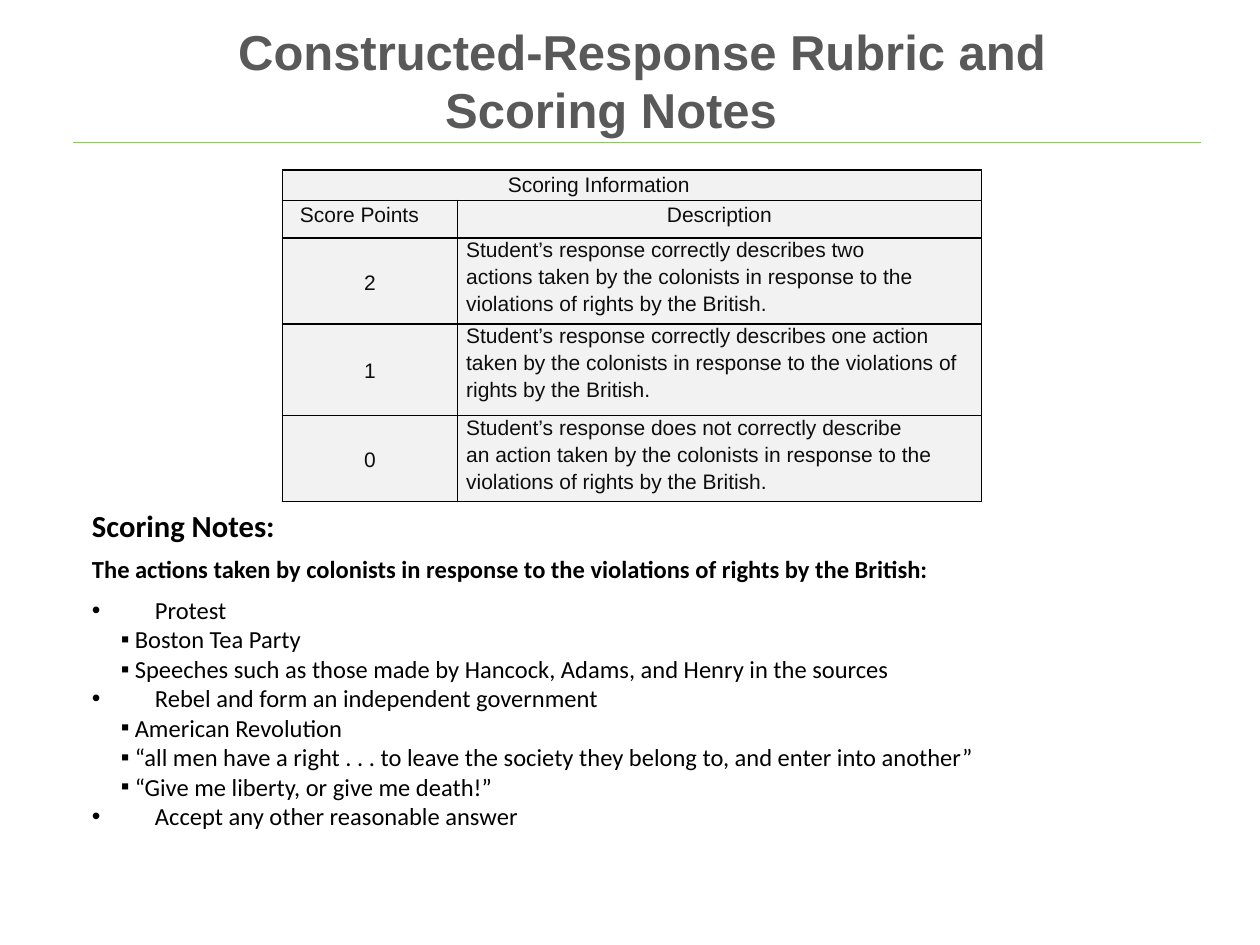
from lxml import etree
from pptx import Presentation
from pptx.dml.color import RGBColor
from pptx.enum.shapes import MSO_CONNECTOR
from pptx.enum.text import MSO_ANCHOR, MSO_AUTO_SIZE, PP_ALIGN
from pptx.oxml.ns import qn
from pptx.util import Inches, Pt

CENTER, LEFT = PP_ALIGN.CENTER, PP_ALIGN.LEFT
TOP, MIDDLE = MSO_ANCHOR.TOP, MSO_ANCHOR.MIDDLE
TITLE_AND_CONTENT = 1

# Content
TITLE = ["Constructed-Response Rubric and", "Scoring Notes"]
CAPTION = "Scoring Information"
HEADER = ["Score Points", "Description"]
SCORES = [
    ("2", "Student’s response correctly describes two",
     "actions taken by the colonists in response to the violations of rights by the British."),
    ("1", "Student’s response correctly describes one action",
     "taken by the colonists in response to the violations of rights by the British."),
    ("0", "Student’s response does not correctly describe",
     "an action taken by the colonists in response to the violations of rights by the British."),
]
NOTES = [  # (kind, text)
    ("heading", "Scoring Notes:"),
    ("lead", "The actions taken by colonists in response to the violations of rights by the British:"),
    ("item", "Protest"),
    ("detail", "Boston Tea Party"),
    ("detail", "Speeches such as those made by Hancock, Adams, and Henry in the sources"),
    ("item", "Rebel and form an independent government"),
    ("detail", "American Revolution"),
    ("detail", "“all men have a right . . . to leave the society they belong to, and enter into another”"),
    ("detail", "“Give me liberty, or give me death!”"),
    ("item", "Accept any other reasonable answer"),
]

# Theme and grid
THEME = {
    "title": ("Arial", 28, "595959", True),
    "table": ("Arial", 12, "0D0D0D", False),
    "heading": ("Calibri", 17.5, "000000", True),
    "lead": ("Calibri", 14, "000000", True),
    "item": ("Calibri", 14, "000000", False),
    "detail": ("Calibri", 14, "000000", False),
    "rule": "90C56A", "cell": "F2F2F2", "border": "000000",
}
LEVELS = {  # kind: (level, left margin, indent, bullet)
    "heading": (0, 0.22, 0, None),
    "lead": (0, 0.22, 0, None),
    "item": (0, 0.72, -0.5, "•"),
    "detail": (1, 0.56, -0.11, "▪"),
}
COLS = [1.39, 4.16]
ROWS = [0.24, 0.3, 0.68, 0.73, 0.68]
TABLE_LEFT = 2.24
CONTENT_TOP = 1.35
NOTES_INSET = sum(ROWS) + 0.04


def style(p, kind):
    name, size, color, bold = THEME[kind]
    for r in p.runs:
        r.font.name, r.font.size, r.font.bold = name, Pt(size), bold
        r.font.color.rgb = RGBColor.from_string(color)


def indent(p, margin, first=0):
    pPr = p._p.get_or_add_pPr()
    pPr.set("marL", str(Inches(margin)))
    pPr.set("indent", str(Inches(first)))
    return pPr


def set_bullet(pPr, char):
    if char is None:
        etree.SubElement(pPr, qn("a:buNone"))
        return
    color = etree.SubElement(pPr, qn("a:buClr"))
    etree.SubElement(color, qn("a:srgbClr"), val=THEME["item"][2])
    etree.SubElement(pPr, qn("a:buFont"), typeface="Arial")
    etree.SubElement(pPr, qn("a:buChar"), char=char)


def set_borders(cell):
    tcPr = cell._tc.get_or_add_tcPr()
    for i, side in enumerate(("lnL", "lnR", "lnT", "lnB")):
        ln = etree.Element(qn("a:" + side), w=str(Pt(1)))
        fill = etree.SubElement(ln, qn("a:solidFill"))
        etree.SubElement(fill, qn("a:srgbClr"), val=THEME["border"])
        tcPr.insert(i, ln)


def fill_cell(cell, text, align=LEFT, margin=0, anchor=TOP):
    cell.text = text
    cell.vertical_anchor = anchor
    for p in cell.text_frame.paragraphs:
        p.alignment, p.line_spacing = align, 1.15
        indent(p, margin)
        style(p, "table")


def place(sp, left, top, width, height):
    sp.left, sp.top, sp.width, sp.height = map(Inches, (left, top, width, height))


prs = Presentation()
prs.slide_width, prs.slide_height = Inches(10), Inches(7.5)
s = prs.slides.add_slide(prs.slide_layouts[TITLE_AND_CONTENT])

# Rule under the title
rule = s.shapes.add_connector(MSO_CONNECTOR.STRAIGHT, Inches(0.58), Inches(1.13), Inches(9.53), Inches(1.13))
rule.line.color.rgb = RGBColor.from_string(THEME["rule"])
rule.line.width = Pt(1)
etree.SubElement(rule._element.spPr, qn("a:effectLst"))

# Title, first line set in to the right
title = s.shapes.title
place(title, 0.26, 0.21, 9.29, 0.8)
tf = title.text_frame
tf.text = "\n".join(TITLE)
tf.auto_size, tf.vertical_anchor = MSO_AUTO_SIZE.NONE, MIDDLE
tf.margin_left, tf.margin_right = Inches(0.08), Inches(0.19)
tf.margin_top, tf.margin_bottom = Inches(0.13), Inches(0.08)
for p, first in zip(tf.paragraphs, (0.49, 0)):
    p.alignment = CENTER
    indent(p, 0, first)
    style(p, "title")

# Scoring notes, below the table
notes = s.placeholders[1]
place(notes, 0.41, CONTENT_TOP, 9.48, 5.73)
tf = notes.text_frame
tf.text = "\n".join(text for _, text in NOTES)
tf.auto_size, tf.vertical_anchor = MSO_AUTO_SIZE.NONE, TOP
tf.margin_top = Inches(NOTES_INSET)
for i, (p, (kind, _)) in enumerate(zip(tf.paragraphs, NOTES)):
    level, margin, first, bullet = LEVELS[kind]
    p.level = level
    p.space_before = Pt(6.4 if i in (1, 2) else 0)
    set_bullet(indent(p, margin, first), bullet)
    style(p, kind)

# Rubric table
frame = s.shapes.add_table(len(ROWS), len(COLS), Inches(TABLE_LEFT), Inches(CONTENT_TOP),
                           Inches(sum(COLS)), Inches(sum(ROWS)))
table = frame.table
for col, width in zip(table.columns, COLS):
    col.width = Inches(width)
for row, height in zip(table.rows, ROWS):
    row.height = Inches(height)
for cell in table.iter_cells():
    cell.margin_left = cell.margin_right = cell.margin_top = cell.margin_bottom = 0
    cell.fill.solid()
    cell.fill.fore_color.rgb = RGBColor.from_string(THEME["cell"])
    set_borders(cell)

table.cell(0, 0).merge(table.cell(0, 1))
fill_cell(table.cell(0, 0), CAPTION, margin=1.79)
fill_cell(table.cell(1, 0), HEADER[0], margin=0.14)
fill_cell(table.cell(1, 1), HEADER[1], CENTER)
for i, (score, opening, rest) in enumerate(SCORES, start=2):
    fill_cell(table.cell(i, 0), score, CENTER, anchor=MIDDLE)
    description = table.cell(i, 1)
    fill_cell(description, opening + "\n" + rest, margin=0.07)
    description.text_frame.paragraphs[0].line_spacing = Pt(13.6)

prs.save("out.pptx")
